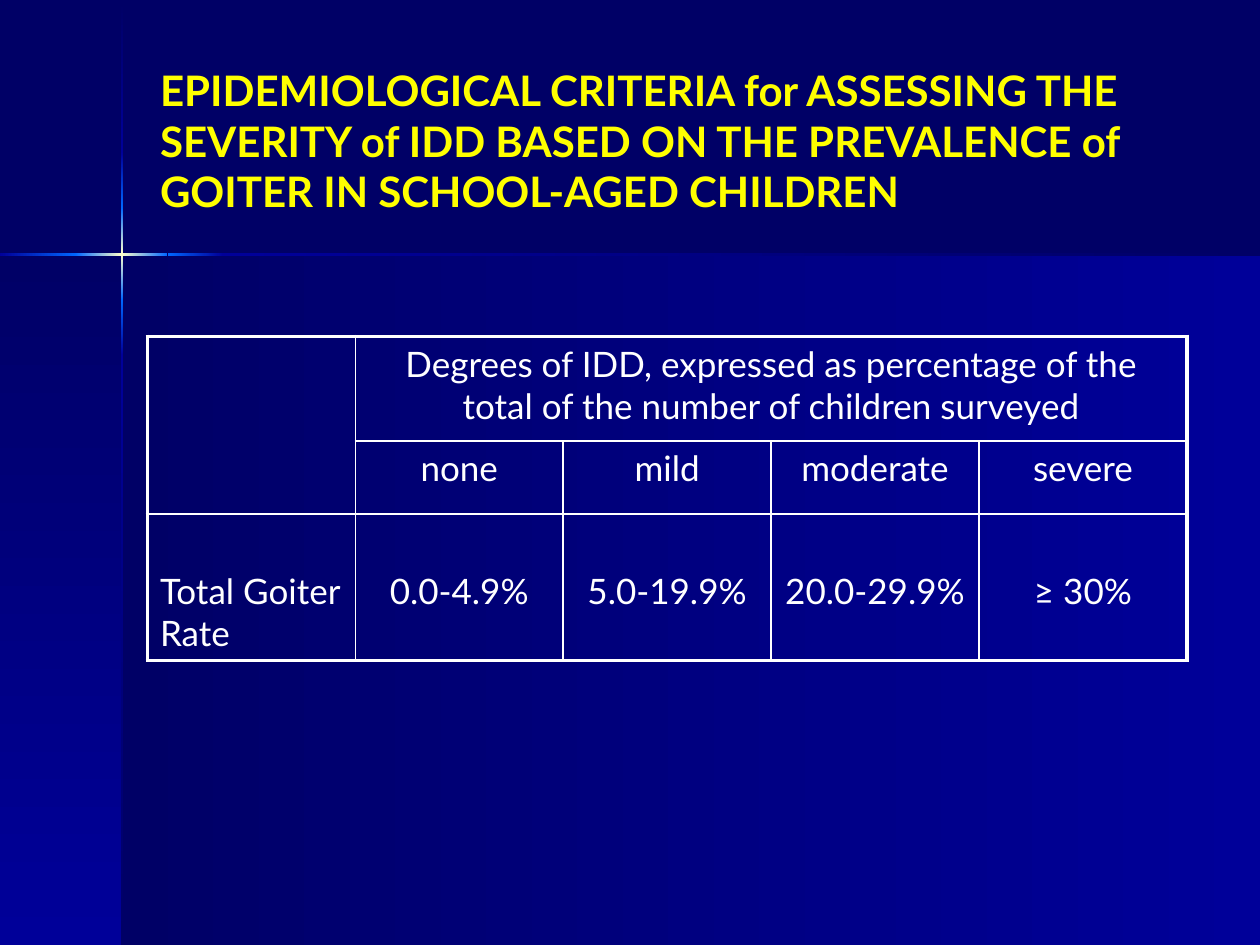
"""Build a slide with a table of criteria for assessing the severity of IDD."""
from copy import deepcopy
from dataclasses import dataclass

from lxml.etree import SubElement
from pptx import Presentation
from pptx.dml.color import RGBColor
from pptx.enum.shapes import MSO_SHAPE
from pptx.enum.text import MSO_ANCHOR, MSO_AUTO_SIZE, PP_ALIGN
from pptx.oxml.ns import qn
from pptx.util import Inches, Pt


@dataclass(frozen=True)
class Theme:
    font: str = "Lato"
    navy: str = "000066"
    blue: str = "000099"
    bright: str = "0066FF"
    glow: str = "FFFFCC"
    title: str = "FFFF00"
    text: str = "FFFFFF"
    title_size: int = 24
    text_size: int = 20
    outer_line: float = 2.25
    inner_line: float = 1


def add_run(p, text, size, color, bold=False):
    r = p.add_run()
    r.text = text
    r.font.name = theme.font
    r.font.size = Pt(size)
    r.font.bold = bold
    r.font.color.rgb = RGBColor.from_string(color)


def add_border(cell, side, width):
    ln = SubElement(cell._tc.get_or_add_tcPr(), qn(f"a:ln{side}"), w=str(Pt(width)))
    fill = SubElement(ln, qn("a:solidFill"))
    SubElement(fill, qn("a:srgbClr"), val=theme.text)


theme = Theme()
prs = Presentation()
prs.slide_width, prs.slide_height = Inches(10), Inches(7.5)
s = prs.slides.add_slide(prs.slide_layouts[5])
s.background.fill.solid()
s.background.fill.fore_color.rgb = RGBColor.from_string(theme.navy)

RIGHT, DOWN = 0, 270
rise = (theme.navy, theme.blue)
fall = rise[::-1]
brighten = (theme.blue, theme.bright)
fade = brighten[::-1]
flare = (theme.bright, theme.glow, theme.bright)
bands = [
    (0.97, 2.02, 9.03, 5.48, RIGHT, rise),
    (0, 2.02, 0.97, 5.48, DOWN, rise),
    (0.96, 0.01, 0.02, 1.2, DOWN, rise),
    (0.96, 2.82, 0.02, 4.68, DOWN, fall),
    (1.77, 2.01, 8.23, 0.02, RIGHT, fall),
    (0.96, 2.38, 0.02, 0.44, DOWN, fade),
    (0.96, 1.21, 0.02, 0.44, DOWN, brighten),
    (0.96, 1.65, 0.02, 0.73, DOWN, flare),
    (0, 2.01, 0.61, 0.02, RIGHT, brighten),
    (1.33, 2.01, 0.44, 0.02, RIGHT, fade),
    (0.6, 2.01, 0.73, 0.02, RIGHT, flare),
]
for left, top, width, height, angle, colors in bands:
    sp = s.shapes.add_shape(MSO_SHAPE.RECTANGLE, Inches(left), Inches(top),
                            Inches(width), Inches(height))
    sp.shadow.inherit = False
    sp.line.fill.background()
    sp.fill.gradient()
    sp.fill.gradient_angle = angle
    stops = sp._element.spPr.find(f".//{qn('a:gsLst')}")
    for _ in colors[2:]:
        stops.append(deepcopy(stops[0]))
    for i, (stop, color) in enumerate(zip(sp.fill.gradient_stops, colors)):
        stop.position = i / (len(colors) - 1)
        stop.color.rgb = RGBColor.from_string(color)

title = s.shapes.title
title.left, title.top = Inches(1.17), Inches(0.33)
title.width, title.height = Inches(8.25), Inches(1.57)
tf = title.text_frame
tf.word_wrap = True
tf.auto_size = MSO_AUTO_SIZE.NONE
tf.vertical_anchor = MSO_ANCHOR.MIDDLE
p = tf.paragraphs[0]
p.alignment = PP_ALIGN.LEFT
add_run(p, "EPIDEMIOLOGICAL CRITERIA for ASSESSING THE SEVERITY of IDD BASED ON "
        "THE PREVALENCE of GOITER IN SCHOOL-AGED CHILDREN",
        theme.title_size, theme.title, bold=True)

rows = [
    ["", "Degrees of IDD, expressed as percentage of the total of the number "
     "of children surveyed", "", "", ""],
    ["", "none", "mild", "moderate", "severe"],
    ["Total Goiter Rate", "0.0-4.9%", "5.0-19.9%", "20.0-29.9%", "≥ 30%"],
]
heights = [0.83, 0.58, 1.16]
n_rows, n_cols = len(rows), len(rows[0])
table = s.shapes.add_table(n_rows, n_cols, Inches(1.17), Inches(2.67),
                           Inches(8.25), Inches(sum(heights))).table
table.first_row = table.horz_banding = False
table.cell(0, 0).merge(table.cell(1, 0))
table.cell(0, 1).merge(table.cell(0, 4))

for i, (texts, height) in enumerate(zip(rows, heights)):
    table.rows[i].height = Inches(height)
    for j, text in enumerate(texts):
        cell = table.cell(i, j)
        outer = {"L": j == 0, "R": j + cell.span_width == n_cols,
                 "T": i == 0, "B": i == n_rows - 1}
        for side, is_outer in outer.items():
            add_border(cell, side, theme.outer_line if is_outer else theme.inner_line)
        cell.fill.background()
        if i == n_rows - 1:
            cell.margin_top = Inches(0.44)
        if text:
            p = cell.text_frame.paragraphs[0]
            p.alignment = PP_ALIGN.CENTER if j else PP_ALIGN.LEFT
            add_run(p, text, theme.text_size, theme.text)

prs.save("out.pptx")
